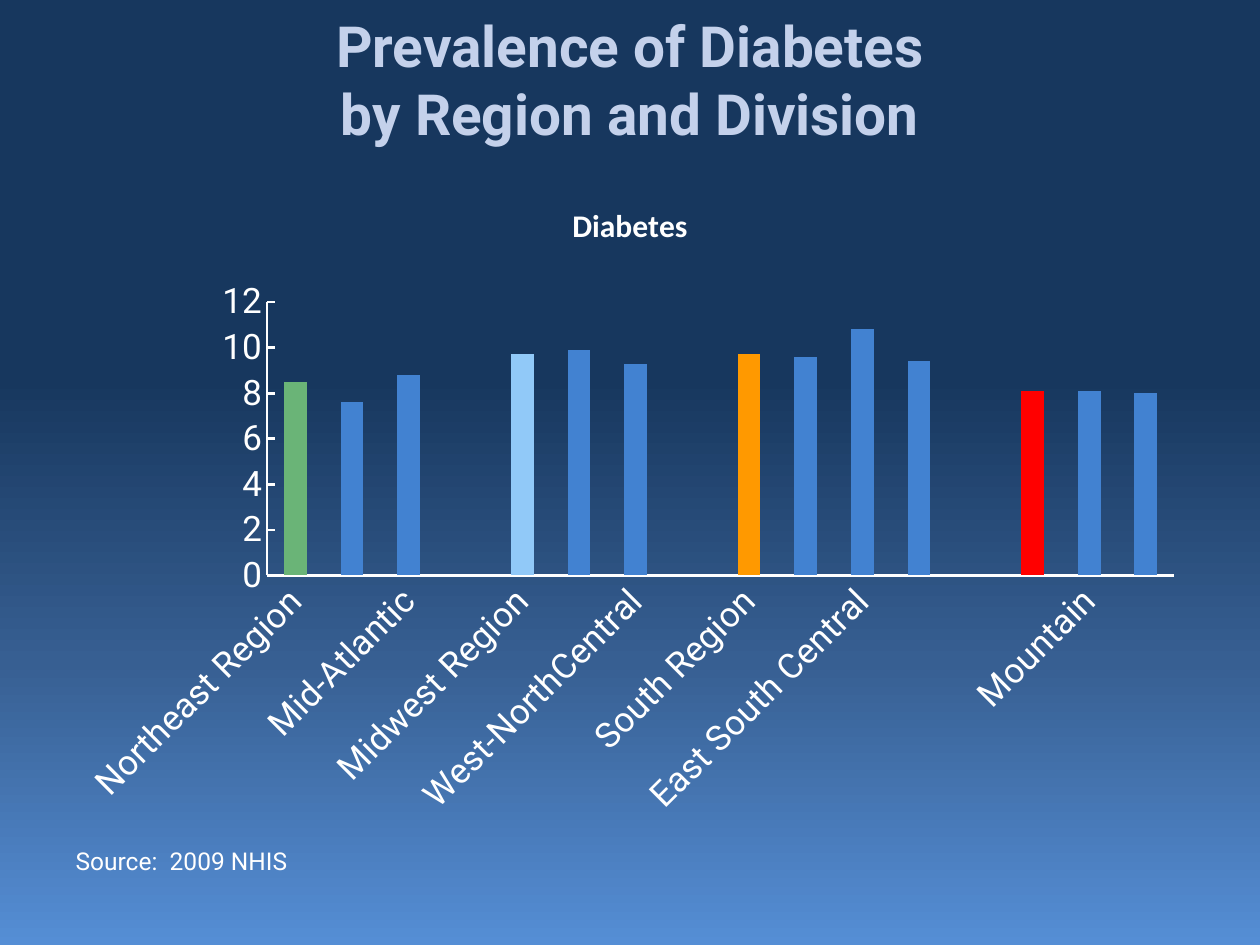
"""Build a slide charting diabetes prevalence by region and division."""
from lxml import etree
from pptx import Presentation
from pptx.chart.data import CategoryChartData
from pptx.dml.color import RGBColor
from pptx.enum.chart import XL_CHART_TYPE, XL_TICK_MARK
from pptx.enum.text import MSO_ANCHOR, MSO_AUTO_SIZE, PP_ALIGN
from pptx.oxml import parse_xml
from pptx.oxml.ns import nsdecls, qn
from pptx.util import Pt

COLUMNS = XL_CHART_TYPE.COLUMN_CLUSTERED
NO_TICK, INSIDE_TICK = XL_TICK_MARK.NONE, XL_TICK_MARK.INSIDE
MIDDLE, TOP = MSO_ANCHOR.MIDDLE, MSO_ANCHOR.TOP
CENTER, LEFT = PP_ALIGN.CENTER, PP_ALIGN.LEFT
NO_AUTOFIT = MSO_AUTO_SIZE.NONE
WHITE = "FFFFFF"


def style_font(font, size, color=WHITE, name="Roboto", bold=False):
    font.size, font.name, font.bold = Pt(size), name, bold
    font.color.rgb = RGBColor.from_string(color)


def write_text(placeholder, text, box, anchor, align, **font_format):
    placeholder.left, placeholder.top, placeholder.width, placeholder.height = map(Pt, box)
    frame = placeholder.text_frame
    frame.word_wrap, frame.auto_size, frame.vertical_anchor = True, NO_AUTOFIT, anchor
    paragraph = frame.paragraphs[0]
    paragraph.text, paragraph.alignment = text, align
    for run in paragraph.runs:
        style_font(run.font, **font_format)
    return paragraph


prs = Presentation()
prs.slide_width, prs.slide_height = Pt(720), Pt(540)
slide = prs.slides.add_slide(prs.slide_layouts[1])

backdrop = slide.background.fill
backdrop.gradient()
backdrop.gradient_angle = 270
stops = slide.background._cSld.find(".//" + qn("a:gsLst"))
for stop in list(stops):
    stops.remove(stop)
for percent, color in [(0, "17375E"), (40, "17375E"), (70, "375F92"), (100, "558ED5")]:
    stop = etree.SubElement(stops, qn("a:gs"), pos=str(percent * 1000))
    etree.SubElement(stop, qn("a:srgbClr"), val=color)

write_text(slide.shapes.title, "Prevalence of Diabetes\nby Region and Division",
           (36, 0, 648, 90), MIDDLE, CENTER, size=32.4, color="C4D1EB", bold=True)

source = write_text(slide.placeholders[1], "Source:  2009 NHIS",
                    (36, 480, 648, 18), TOP, LEFT, size=14)
source.space_before = Pt(2.8)
source_format = source._p.get_or_add_pPr()
source_format.set("marL", str(Pt(27)))
source_format.set("indent", str(-Pt(27)))
etree.SubElement(source_format, qn("a:buNone"))

prevalence = [
    ("Northeast Region", 8.5), ("New England", 7.6), ("Mid-Atlantic", 8.8), ("", None),
    ("Midwest Region", 9.7), ("East-North Central", 9.9), ("West-NorthCentral", 9.3), ("", None),
    ("South Region", 9.7), ("South Atlantic", 9.6), ("East South Central", 10.8),
    ("West South Central", 9.4), ("", None),
    ("West", 8.1), ("Mountain", 8.1), ("Pacific", 8),
]
region_colors = {"Northeast Region": "6AB477", "Midwest Region": "91C9F8",
                 "South Region": "FF9900", "West": "FF0000"}
areas, rates = zip(*prevalence)
chart_data = CategoryChartData()
chart_data.categories = areas
chart_data.add_series("Series 1", rates)
chart = slide.shapes.add_chart(COLUMNS, Pt(36), Pt(102), Pt(648), Pt(372), chart_data).chart
style_font(chart.font, 18, name="Calibri")
chart.has_legend = False
chart.has_title = True
heading = chart.chart_title.text_frame
heading.text = "Diabetes"
style_font(heading.paragraphs[0].runs[0].font, 18, name="Calibri", bold=True)

bars = chart.plots[0]
bars.vary_by_categories = False
bars.gap_width = 150
series = bars.series[0]
series.format.fill.solid()
series.format.fill.fore_color.rgb = RGBColor.from_string("4282D1")
for region, color in region_colors.items():
    region_fill = series.points[areas.index(region)].format.fill
    region_fill.solid()
    region_fill.fore_color.rgb = RGBColor.from_string(color)

area_axis, rate_axis = chart.category_axis, chart.value_axis
for axis, tick in [(area_axis, NO_TICK), (rate_axis, INSIDE_TICK)]:
    axis.has_major_gridlines = False
    axis.major_tick_mark, axis.minor_tick_mark = tick, NO_TICK
    style_font(axis.tick_labels.font, 20)
    axis.format.line.width = Pt(1.5)
    axis.format.line.color.rgb = RGBColor.from_string(WHITE)
rate_axis.minimum_scale, rate_axis.maximum_scale, rate_axis.major_unit = 0, 12, 2

area_xml = area_axis._element
area_xml.find(qn("c:txPr")).find(qn("a:bodyPr")).set("rot", "-2700000")
area_xml.find(qn("c:noMultiLvlLbl")).addprevious(
    parse_xml(f'<c:tickLblSkip {nsdecls("c")} val="2"/>'))

layout = parse_xml(
    f'<c:layout {nsdecls("c")}><c:manualLayout><c:layoutTarget val="inner"/>'
    '<c:xMode val="edge"/><c:yMode val="edge"/><c:x val="0.18"/><c:y val="0.19"/>'
    '<c:w val="0.8"/><c:h val="0.42"/></c:manualLayout></c:layout>')
chart._chartSpace.find(".//" + qn("c:plotArea")).insert(0, layout)

prs.save("out.pptx")
